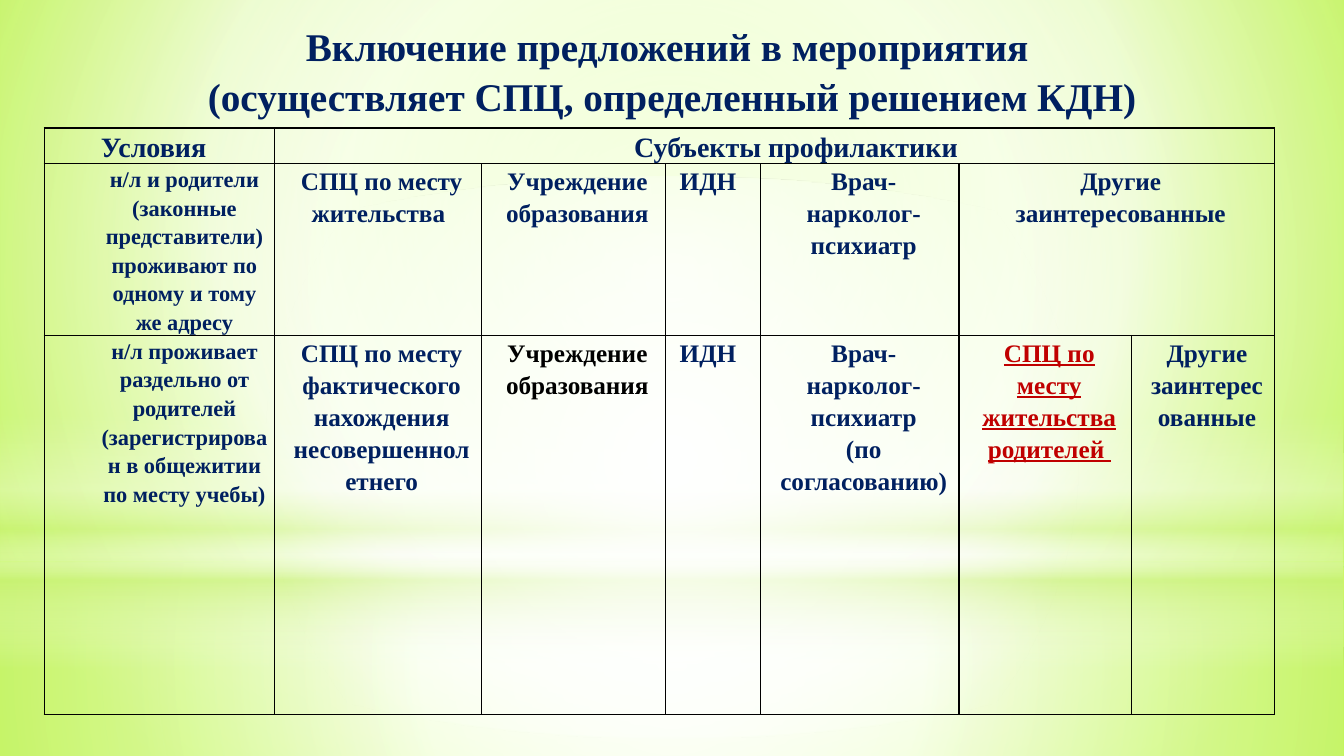
from lxml.etree import SubElement
from pptx import Presentation
from pptx.dml.color import RGBColor
from pptx.enum.shapes import MSO_SHAPE
from pptx.enum.text import MSO_ANCHOR, PP_ALIGN
from pptx.oxml.ns import qn
from pptx.util import Inches, Pt

COLORS = {
    "navy": "002060", "black": "000000", "red": "C00000", "white": "FFFFFF",
    "lime": "CAF278", "glow": "CAFF60", "mist": "F7FFE7", "leaf": "B7FF29",
}
FONT = "Times New Roman"
CENTRE = (50, 50, 50, 50)

# Widths and heights are percentages of the slide.
COLUMNS = [17.1, 15.4, 13.73, 7.05, 14.78, 12.83, 10.65]
ROWS = [4.13, 20.8, 50.13]
LEFT = {"alignment": PP_ALIGN.LEFT}
RED = {"color": "red", "underline": True}
CELLS = [
    # row, column, columns spanned, text, format
    (0, 0, 1, "Условия", LEFT),
    (0, 1, 6, "Субъекты профилактики ", {}),
    (1, 0, 1, "н/л и родители (законные представители) проживают по одному и тому же адресу", {}),
    (1, 1, 1, "СПЦ по месту жительства ", {}),
    (1, 2, 1, "Учреждение образования", {}),
    (1, 3, 1, "ИДН", LEFT),
    (1, 4, 1, "Врач-нарколог-психиатр", {}),
    (1, 5, 2, "Другие заинтересованные", {}),
    (2, 0, 1, "н/л проживает раздельно от родителей\n"
              "(зарегистрирован в общежитии по месту учебы)", {}),
    (2, 1, 1, "СПЦ по месту фактического нахождения несовершеннолетнего", {}),
    (2, 2, 1, "Учреждение образования", {"color": "black"}),
    (2, 3, 1, "ИДН", LEFT),
    (2, 4, 1, "Врач-нарколог-психиатр\n(по согласованию)", {}),
    (2, 5, 1, "СПЦ по месту жительства родителей ", RED),
    (2, 6, 1, "Другие заинтересованные", {}),
]


def assign(target, values):
    for name, value in values.items():
        setattr(target, name, value)


def add_colour(parent, color, opacity=100):
    node = SubElement(parent, qn("a:srgbClr"), val=COLORS[color])
    if opacity < 100:
        SubElement(node, qn("a:alpha"), val=str(opacity * 1000))


def set_gradient(properties, stops, focus=None, angle=0):
    """Swap the solid fill for a gradient: circular around focus, else linear."""
    solid = properties.find(qn("a:solidFill"))
    gradient = SubElement(properties, qn("a:gradFill"), rotWithShape="1")
    properties.replace(solid, gradient)
    stop_list = SubElement(gradient, qn("a:gsLst"))
    for position, *colour in stops:
        add_colour(SubElement(stop_list, qn("a:gs"), pos=str(position * 1000)), *colour)
    if focus:
        circle = SubElement(gradient, qn("a:path"), path="circle")
        sides = {side: str(share * 1000) for side, share in zip("ltrb", focus)}
        SubElement(circle, qn("a:fillToRect"), **sides)
    else:
        SubElement(gradient, qn("a:lin"), ang=str(angle * 60000), scaled="0")


class SlideBuilder:
    def __init__(self, deck):
        self.deck = deck
        self.page = deck.slides.add_slide(deck.slide_layouts[5])

    def across(self, percent):
        return round(self.deck.slide_width * percent / 100)

    def down(self, percent):
        return round(self.deck.slide_height * percent / 100)

    def place(self, left, top, width, height):
        return self.across(left), self.down(top), self.across(width), self.down(height)

    def style(self, para, size, color="navy", underline=False, **layout):
        assign(para, layout)
        assign(para.font, {"name": FONT, "size": Pt(size), "bold": True,
                           "underline": underline})
        para.font.color.rgb = RGBColor.from_string(COLORS[color])
        for span in para.runs:
            assign(span.font, {"name": FONT, "size": Pt(size), "bold": True,
                               "underline": underline})
            span.font.color.rgb = RGBColor.from_string(COLORS[color])

    def background(self, stops, focus):
        self.page.background.fill.solid()
        set_gradient(next(self.page.element.iter(qn("p:bgPr"))), stops, focus)

    def glow(self, kind, box, stops, focus=None, angle=0):
        shape = self.page.shapes.add_shape(kind, *self.place(*box))
        shape.shadow.inherit = False
        shape.line.fill.background()
        shape.fill.solid()
        set_gradient(shape.element.spPr, stops, focus, angle)

    def title(self, box, text):
        title = self.page.shapes.title
        assign(title, dict(zip(("left", "top", "width", "height"), self.place(*box))))
        frame = title.text_frame
        assign(frame, {"text": text, "word_wrap": True, "vertical_anchor": MSO_ANCHOR.TOP})
        self.style(frame.paragraphs[0], 28, alignment=PP_ALIGN.CENTER, line_spacing=1.08)
        # Bring the title in front of the glows.
        title.element.getparent().append(title.element)

    def table(self, left, top):
        box = self.place(left, top, sum(COLUMNS), sum(ROWS))
        grid = self.page.shapes.add_table(len(ROWS), len(COLUMNS), *box).table
        assign(grid, {"first_row": False, "horz_banding": False})
        for column, width in zip(grid.columns, COLUMNS):
            column.width = self.across(width)
        for row, height in zip(grid.rows, ROWS):
            row.height = self.down(height)
        for cell in grid.iter_cells():
            self.outline(cell)
        for row, column, span, text, look in CELLS:
            cell = grid.cell(row, column)
            if span > 1:
                cell.merge(grid.cell(row, column + span - 1))
            self.fill_cell(cell, row, column, text, look)

    def outline(self, cell):
        """Give an unfilled cell black borders and narrow margins."""
        assign(cell, {"margin_left": Inches(0.06), "margin_right": Inches(0.06),
                      "margin_top": 0, "margin_bottom": 0})
        properties = cell._tc.get_or_add_tcPr()
        for side in ("lnL", "lnR", "lnT", "lnB"):
            line = SubElement(properties, qn(f"a:{side}"), w=str(Pt(1)))
            add_colour(SubElement(line, qn("a:solidFill")), "black")
        cell.fill.background()

    def fill_cell(self, cell, row, column, text, look):
        size = 20 if row == 0 else 16 if column == 0 else 18
        indent = 0.5 if row == 0 or column == 0 else 0.08
        cell.text = text
        for para in cell.text_frame.paragraphs:
            self.style(para, size, **{"alignment": PP_ALIGN.CENTER,
                                      "line_spacing": 1.15, **look})
            properties = para._p.get_or_add_pPr()
            properties.set("marL", str(Inches(indent)))
            properties.set("indent", "0")


def main():
    deck = Presentation()
    assign(deck, {"slide_width": Inches(13.33), "slide_height": Inches(7.5)})
    slide = SlideBuilder(deck)
    slide.background([(0, "glow"), (60, "mist"), (100, "leaf")], (20, 10, 20, 60))
    slide.glow(MSO_SHAPE.RECTANGLE, (0, 74.4, 100, 25.6),
               [(0, "white", 91), (37, "white", 76), (100, "lime", 79)], CENTRE)
    slide.glow(MSO_SHAPE.RECTANGLE, (0, 0, 100, 74.4),
               [(0, "white", 89), (48, "white", 62), (100, "lime", 79)], CENTRE)
    slide.glow(MSO_SHAPE.RECTANGLE, (0, 54.93, 100, 33.33),
               [(0, "white", 0), (29, "white", 30), (45, "lime", 40),
                (55, "white", 26), (65, "lime", 60), (100, "white", 0)], angle=90)
    slide.glow(MSO_SHAPE.OVAL, (0, 23.33, 100, 74.4),
               [(0, "white"), (56, "white", 0)], CENTRE)
    slide.title((5, 1.73, 90, 15.73),
                "Включение предложений в мероприятия \v"
                "(осуществляет СПЦ, определенный решением КДН)")
    slide.table(3.3, 16.93)
    deck.save("out.pptx")


if __name__ == "__main__":
    main()
